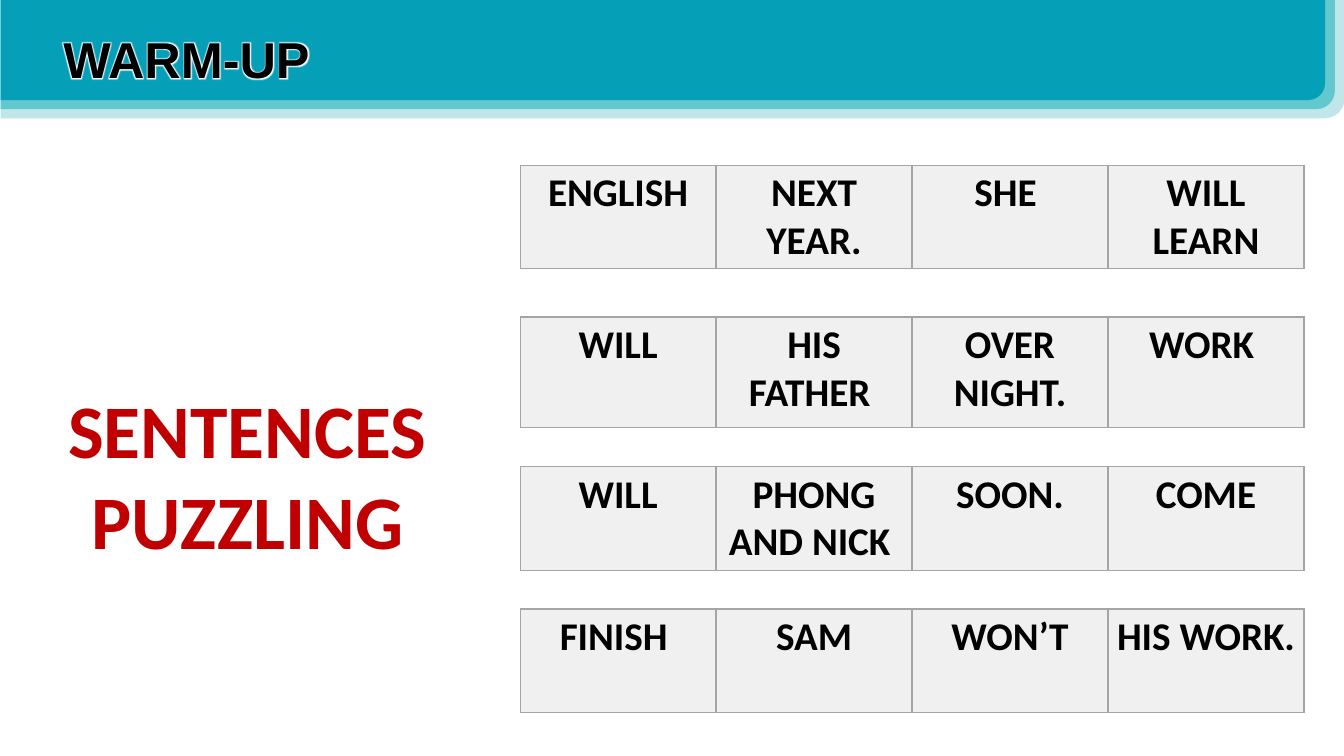
import dataclasses
import pptx
import pptx.dml.color
import pptx.enum.shapes
import pptx.enum.text
import pptx.oxml
import pptx.oxml.ns
import pptx.util

Pt = pptx.util.Pt
RGB = pptx.dml.color.RGBColor.from_string
align = pptx.enum.text.PP_ALIGN
anchor = pptx.enum.text.MSO_ANCHOR
space = pptx.oxml.ns.nsdecls("a")


@dataclasses.dataclass(frozen=True)
class Theme:
    bands: tuple = ("C0E6EA", "62C8CE", "05A0B8")
    ink: str = "000000"
    red: str = "C00000"
    cell: str = "F0F0F0"
    line: str = "A5A5A5"
    glow: str = "FFFFFF"
    head: int = 36
    game: int = 54
    word: int = 28


theme = Theme()


def write(frame, text, side, size, color, face="Calibri"):
    """Fill a text frame with bold text, one paragraph per line of text."""
    frame.text = text
    for para in frame.paragraphs:
        para.alignment = side
        para.space_before = Pt(0)
        para.line_spacing = 1.0
        font = para.runs[0].font
        for name, value in {"name": face, "size": Pt(size), "bold": True}.items():
            setattr(font, name, value)
        font.color.rgb = RGB(color)


deck = pptx.Presentation()
deck.slide_width, deck.slide_height = Pt(960), Pt(540)
slide = deck.slides.add_slide(deck.slide_layouts[5])
shapes = slide.shapes

# Header bands, each smaller than the one behind it
for step, color in enumerate(theme.bands):
    band = shapes.add_shape(
        pptx.enum.shapes.MSO_SHAPE.ROUND_1_RECTANGLE,
        Pt(0.5), Pt(-0.5), Pt(960 - 7 * step), Pt(85 - 6.5 * step))
    band.shadow.inherit = False
    band.fill.solid()
    band.fill.fore_color.rgb = RGB(color)
    band.line.fill.background()
    band._element.spPr.xfrm.set("flipV", "1")

# Title, brought in front of the bands
title = shapes.title
shapes._spTree.append(title._element)
places = {"left": Pt(38), "top": Pt(16.5), "width": Pt(325.5), "height": Pt(51)}
for name, value in places.items():
    setattr(title, name, value)
write(title.text_frame, "WARM-UP", align.LEFT, theme.head, theme.ink, "Arial")
title.text_frame.vertical_anchor = anchor.TOP
title.text_frame.auto_size = pptx.enum.text.MSO_AUTO_SIZE.NONE
glow = pptx.oxml.parse_xml(
    f'<a:effectLst {space}><a:glow rad="38100"><a:srgbClr val="{theme.glow}"/>'
    '</a:glow></a:effectLst>')
font = title.text_frame.paragraphs[0].runs[0]._r.rPr
font.find(pptx.oxml.ns.qn("a:solidFill")).addnext(glow)

# Name of the game
game = shapes.add_textbox(Pt(37.5), Pt(270), Pt(278.5), Pt(138))
game.text_frame.word_wrap = True
write(game.text_frame, "SENTENCES PUZZLING", align.CENTER, theme.game, theme.red)

# Jumbled sentences: top, height and words of each
rows = [
    (118, 74, ["ENGLISH", "NEXT YEAR.", "SHE ", "WILL LEARN"]),
    (226.5, 79, ["WILL", "HIS FATHER ", "OVER\nNIGHT.", "WORK "]),
    (333.5, 74, ["WILL", "PHONG AND NICK ", "SOON.", "COME"]),
    (435, 74, ["FINISH ", "SAM", "WON’T", "HIS WORK."]),
]
pads = {"margin_left": Pt(5.4), "margin_right": Pt(5.4),
        "margin_top": Pt(2.8), "margin_bottom": Pt(2.8),
        "vertical_anchor": anchor.TOP}
flags = {"first_row": False, "horz_banding": False}
for top, height, words in rows:
    table = shapes.add_table(
        1, len(words), Pt(371.5), Pt(top), Pt(560), Pt(height)).table
    for name, value in flags.items():
        setattr(table, name, value)
    for cell, word in zip(table.iter_cells(), words):
        write(cell.text_frame, word, align.CENTER, theme.word, theme.ink)
        for name, value in pads.items():
            setattr(cell, name, value)
        cell.fill.solid()
        cell.fill.fore_color.rgb = RGB(theme.cell)
        props = cell._tc.get_or_add_tcPr()
        for spot, side in enumerate("LRTB"):
            props.insert(spot, pptx.oxml.parse_xml(
                f'<a:ln{side} {space} w="12700"><a:solidFill>'
                f'<a:srgbClr val="{theme.line}"/></a:solidFill></a:ln{side}>'))

deck.save("out.pptx")
